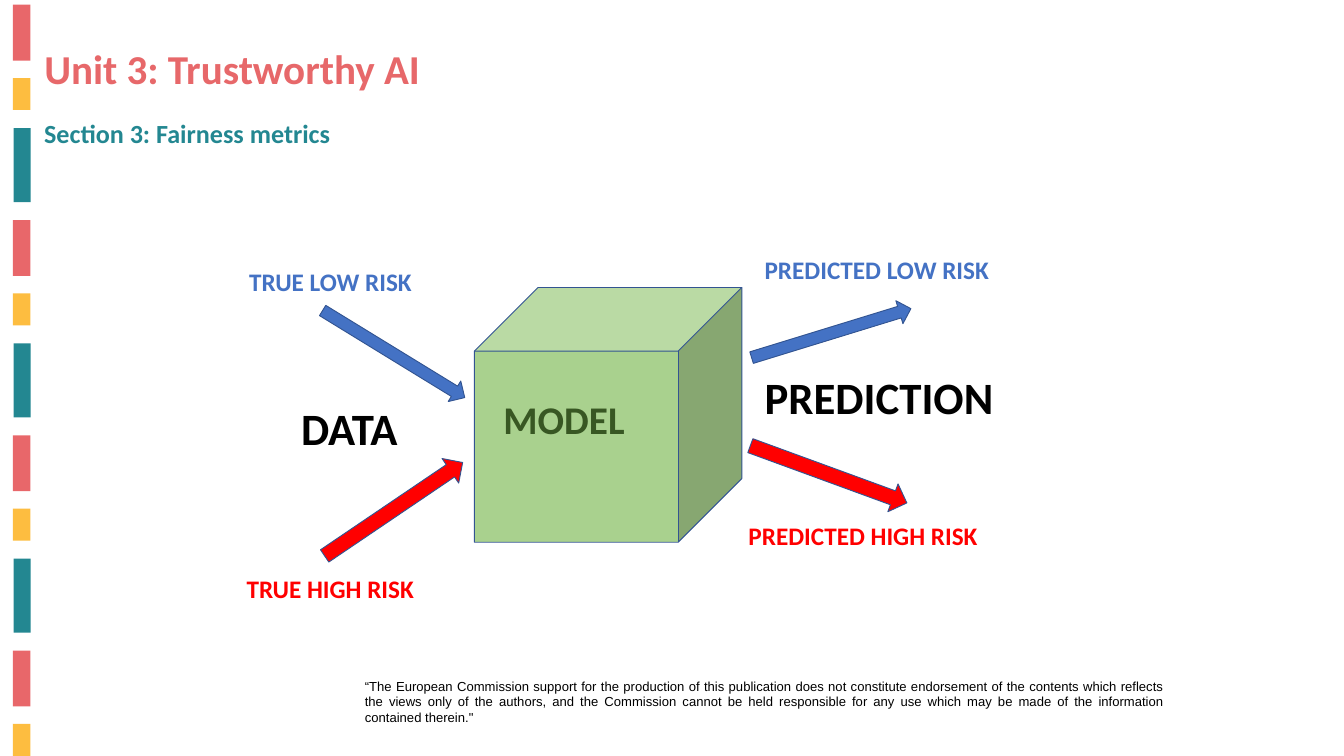
from pptx import Presentation
from pptx.dml.color import RGBColor
from pptx.enum.shapes import MSO_SHAPE
from pptx.enum.text import MSO_ANCHOR, MSO_AUTO_SIZE, PP_ALIGN
from pptx.util import Cm, Pt

BLUE, RED, BLACK = "4472C4", "FF0000", "000000"
GREEN, DARK, EDGE = "A9D18E", "385723", "325491"
CORAL, GOLD, TEAL = "E8676A", "FDBD40", "238791"

NOTE = (
    "“The European Commission support for the production of this publication "
    "does not constitute endorsement of the contents which reflects the views "
    "only of the authors, and the Commission cannot be held responsible for any "
    "use which may be made of the information contained therein.\""
)


def paint(fmt, color):
    """Give a fill a solid colour."""
    fmt.solid()
    fmt.fore_color.rgb = RGBColor.from_string(color)


def add_run(para, text, size, color, font="Calibri", bold=True):
    run = para.add_run()
    run.text = text
    run.font.name = font
    run.font.size = Pt(size)
    run.font.bold = bold
    run.font.color.rgb = RGBColor.from_string(color)


def add_form(slide, kind, box, color, edge=None, turn=0):
    """Add a preset shape, with or without an outline."""
    form = slide.shapes.add_shape(kind, *map(Cm, box))
    form.shadow.inherit = False
    form.rotation = turn
    paint(form.fill, color)
    if edge:
        paint(form.line.fill, edge)
        form.line.width = Pt(1)
    else:
        form.line.fill.background()


def add_label(slide, box, text, size, color, **style):
    """Add a text box and return its paragraph."""
    frame = slide.shapes.add_textbox(*map(Cm, box)).text_frame
    frame.word_wrap = True
    frame.auto_size = MSO_AUTO_SIZE.SHAPE_TO_FIT_TEXT
    para = frame.paragraphs[0]
    add_run(para, text, size, color, **style)
    return para


def add_bars(slide):
    """Repeat the three-colour pattern down the left edge."""
    bars = [
        (0.49, 0.18, 0.66, 2.11, CORAL),
        (0.49, 2.95, 0.66, 1.21, GOLD),
        (0.52, 4.84, 0.64, 2.8, TEAL),
    ]
    for i in range(11):
        turn, part = divmod(i, len(bars))
        left, top, width, height, color = bars[part]
        box = (left, top + turn * 8.14, width, height)
        add_form(slide, MSO_SHAPE.RECTANGLE, box, color)


def add_title(slide, text):
    title = slide.shapes.title
    title.left, title.top = Cm(1.42), Cm(1.73)
    title.width, title.height = Cm(15.72), Cm(1.55)
    frame = title.text_frame
    frame.word_wrap = True
    frame.auto_size = MSO_AUTO_SIZE.NONE
    frame.vertical_anchor = MSO_ANCHOR.TOP
    para = frame.paragraphs[0]
    para.alignment = PP_ALIGN.LEFT
    para.line_spacing = 0.9
    add_run(para, text, 44, "E7686A")


def add_note(slide):
    box = (13.54, 25.51, 30.72, 2.06)
    para = add_label(slide, box, NOTE, 14, BLACK, font="Arial", bold=False)
    para.alignment = PP_ALIGN.JUSTIFY


def add_model(slide):
    """Draw the cube, the arrows in and out, and their labels."""
    add_form(slide, MSO_SHAPE.CUBE, (17.93, 10.87, 10.11, 9.63), GREEN, EDGE)

    arrows = [
        (11.73, 12.93, 0.91, 31.5, BLUE),
        (11.73, 18.69, 1.12, 325.9, RED),
        (28.27, 12.14, 0.91, 342.9, BLUE),
        (28.17, 17.37, 1.12, 20.1, RED),
    ]
    for left, top, height, turn, color in arrows:
        box = (left, top, 6.3, height)
        add_form(slide, MSO_SHAPE.RIGHT_ARROW, box, color, EDGE, turn)

    labels = [
        ((9.17, 9.93, 8.79, 1.42), "TRUE LOW RISK", 27, BLUE),
        ((9.07, 21.56, 8.89, 1.42), "TRUE HIGH RISK", 27, RED),
        ((28.65, 9.5, 11.56, 1.42), "PREDICTED LOW RISK", 27, BLUE),
        ((28.04, 19.53, 12.6, 1.42), "PREDICTED HIGH RISK", 27, RED),
        ((11.13, 15.01, 5.69, 2.31), "DATA", 48, BLACK),
        ((18.78, 14.83, 6.15, 2.06), "MODEL", 42, DARK),
        ((28.65, 13.84, 12.22, 2.31), "PREDICTION", 48, BLACK),
    ]
    for label in labels:
        add_label(slide, *label)


def main():
    deck = Presentation()
    deck.slide_width, deck.slide_height = Cm(50.8), Cm(28.58)
    slide = deck.slides.add_slide(deck.slide_layouts[5])  # title only

    add_bars(slide)
    add_note(slide)
    add_model(slide)

    # Headings
    add_title(slide, "Unit 3: Trustworthy AI")
    add_label(slide, (1.42, 4.32, 27.89, 1.45),
              "Section 3: Fairness metrics", 28, TEAL)

    deck.save("out.pptx")


if __name__ == "__main__":
    main()
